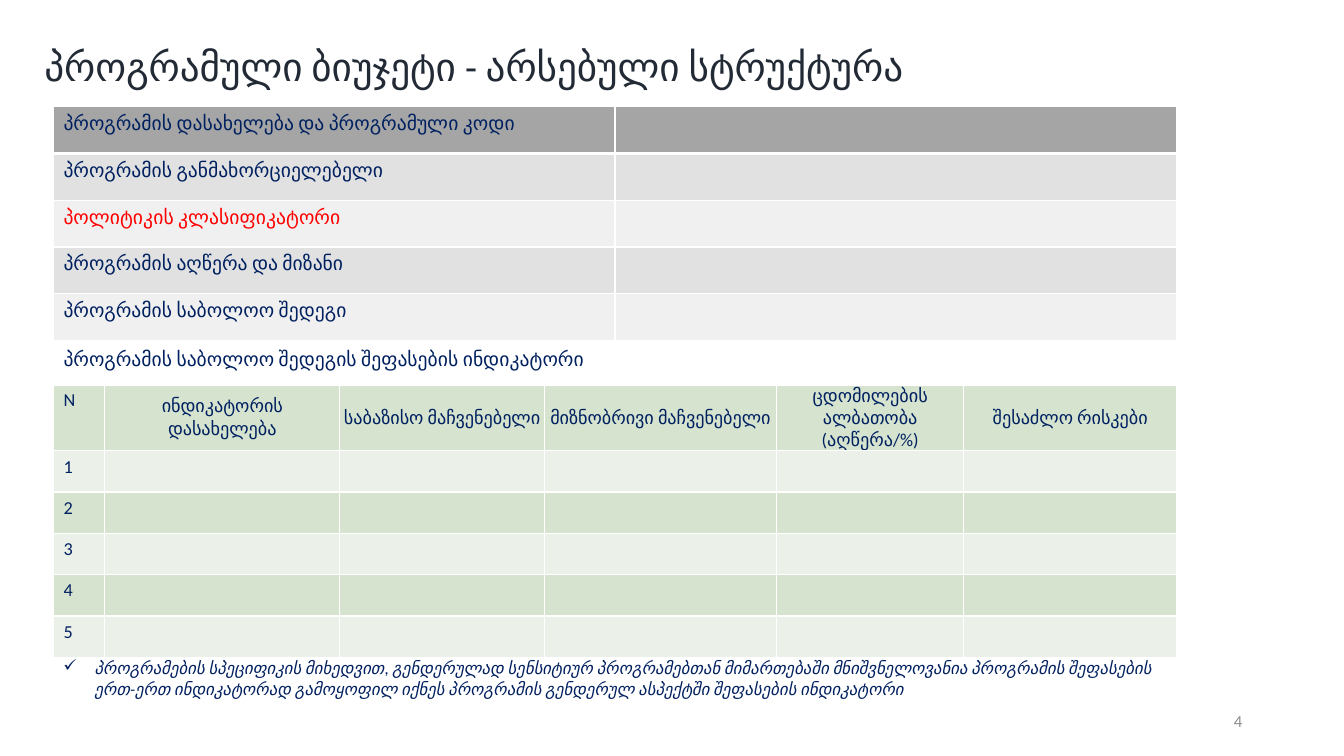
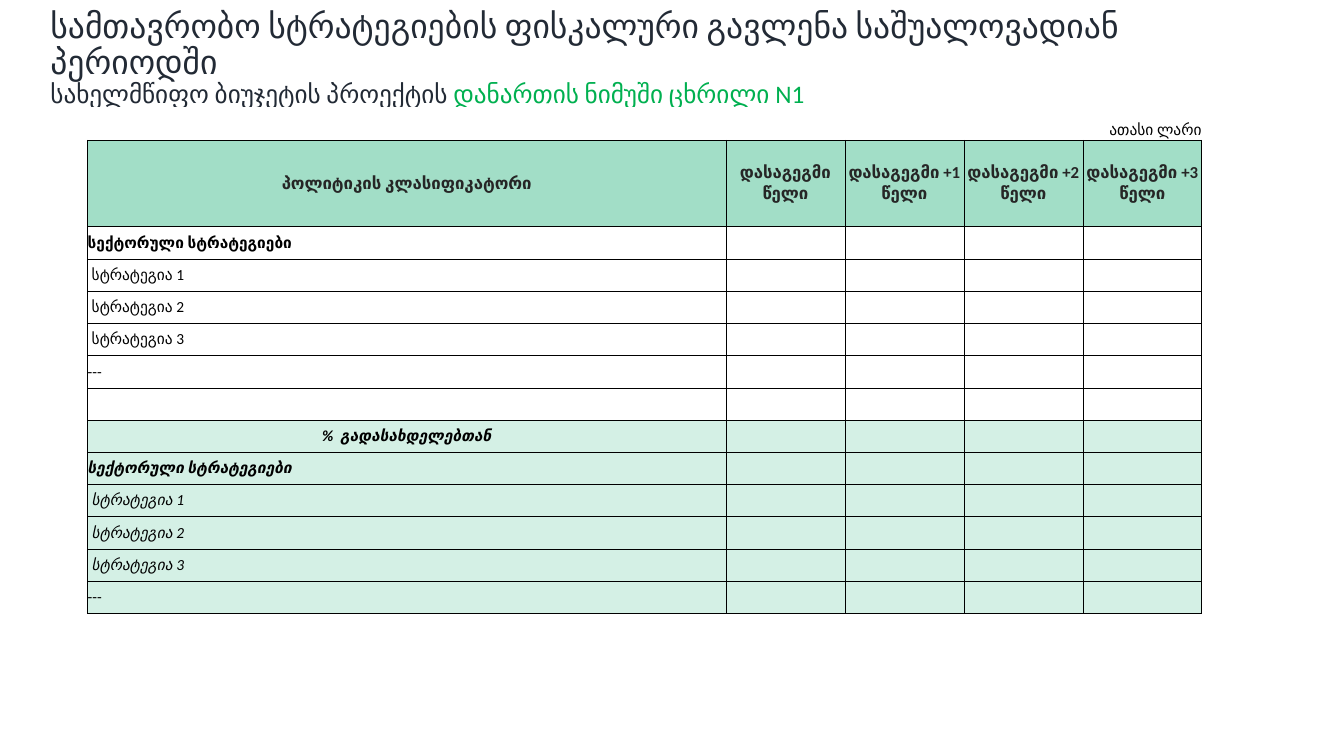
from lxml import etree
from pptx import Presentation
from pptx import util as u
from pptx.dml import color
from pptx.enum import text
from pptx.oxml import ns

COLORS = {
    "title": "222A35", "navy": "002060", "red": "FF0000", "green": "00B050",
    "number": "8C8C8C", "white": "FFFFFF", "black": "000000", "header": "262626",
    "gray": "A5A5A5", "gray_mid": "E1E1E1", "gray_light": "F0F0F0",
    "sage": "D5E3CF", "sage_light": "EBF1E9", "mint": "A2DEC7", "mint_light": "D4F0E5",
}
FONT = "Calibri"
LEFT, CENTER, RIGHT = text.PP_ALIGN.LEFT, text.PP_ALIGN.CENTER, text.PP_ALIGN.RIGHT
TOP, MIDDLE, BOTTOM = text.MSO_ANCHOR.TOP, text.MSO_ANCHOR.MIDDLE, text.MSO_ANCHOR.BOTTOM
SIDES = ("L", "R", "T", "B")


def rgb(name):
    return color.RGBColor.from_string(COLORS[name])


def apply(target, values):
    for name, value in values.items():
        setattr(target, name, value)


def add_run(paragraph, wording, size, color_name, **values):
    run = paragraph.add_run()
    run.text = wording
    apply(run.font, {"name": FONT, "size": u.Pt(size), **values})
    run.font.color.rgb = rgb(color_name)


def set_title(slide, box, anchor, lines, space_before=0):
    title = slide.shapes.title
    apply(title, dict(zip(("left", "top", "width", "height"), map(u.Inches, box))))
    apply(title.text_frame, {"word_wrap": True, "vertical_anchor": anchor,
                             "auto_size": text.MSO_AUTO_SIZE.NONE})
    paragraph = title.text_frame.paragraphs[0]
    apply(paragraph, {"alignment": LEFT, "line_spacing": 0.9,
                      "space_before": u.Pt(space_before)})
    for index, line in enumerate(lines):
        if index:
            paragraph.add_line_break()
        for wording, size, color_name in line:
            add_run(paragraph, wording, size, color_name)


def add_text(slide, box, wording, size, color_name, alignment=LEFT, anchor=TOP, **values):
    shape = slide.shapes.add_textbox(*map(u.Inches, box))
    apply(shape.text_frame, {"word_wrap": True, "vertical_anchor": anchor})
    paragraph = shape.text_frame.paragraphs[0]
    paragraph.alignment = alignment
    add_run(paragraph, wording, size, color_name, **values)
    return paragraph


def add_check_bullet(paragraph, indent):
    properties = paragraph._p.get_or_add_pPr()
    properties.set("marL", str(u.Inches(indent)))
    properties.set("indent", str(-u.Inches(indent)))
    etree.SubElement(properties, ns.qn("a:buChar"), char="✓")


def add_table(slide, left, top, columns, rows):
    frame = slide.shapes.add_table(len(rows), len(columns), *map(
        u.Inches, (left, top, sum(columns), sum(rows))))
    table = frame.table
    apply(table, {"first_row": False, "horz_banding": False})
    for column, width in zip(table.columns, columns):
        column.width = u.Inches(width)
    for row, height in zip(table.rows, rows):
        row.height = u.Inches(height)
    return table


def style_cell(cell, fill, border, widths):
    properties = cell._tc.get_or_add_tcPr()
    for side in SIDES:
        if side in widths:
            line = etree.SubElement(properties, ns.qn("a:ln" + side),
                                    w=str(u.Pt(widths[side])))
            solid = etree.SubElement(line, ns.qn("a:solidFill"))
            etree.SubElement(solid, ns.qn("a:srgbClr"), val=COLORS[border])
    cell.fill.solid()
    cell.fill.fore_color.rgb = rgb(fill)


def style_white_grid(table, fills):
    for row_index, fill in enumerate(fills):
        widths = dict.fromkeys(SIDES, 1)
        if row_index < 2:
            widths["TB"[1 - row_index]] = 3
        for cell in table.rows[row_index].cells:
            style_cell(cell, fill, "white", widths)


def set_margins(cell, left, top, right, bottom):
    names = ("margin_left", "margin_top", "margin_right", "margin_bottom")
    apply(cell, dict(zip(names, map(u.Inches, (left, top, right, bottom)))))


def write_cell(cell, wording, size, color_name, alignment=LEFT, anchor=TOP, **values):
    cell.vertical_anchor = anchor
    paragraph = cell.text_frame.paragraphs[0]
    paragraph.alignment = alignment
    add_run(paragraph, wording, size, color_name, **values)


def add_program_table(slide, left, top, width):
    labels = (
        ("პროგრამის დასახელება და პროგრამული კოდი", "navy"),
        ("პროგრამის განმახორციელებელი", "navy"),
        ("პოლიტიკის კლასიფიკატორი", "red"),
        ("პროგრამის აღწერა და მიზანი", "navy"),
        ("პროგრამის საბოლოო შედეგი", "navy"),
    )
    table = add_table(slide, left, top, [width / 2] * 2, [0.464] * len(labels))
    style_white_grid(table, ["gray"] + ["gray_mid", "gray_light"] * 2)
    for row_index, (label, color_name) in enumerate(labels):
        write_cell(table.cell(row_index, 0), label, 14, color_name)


def add_indicator_table(slide, left, top):
    headings = ("ინდიკატორის დასახელება", "საბაზისო მაჩვენებელი",
                "მიზნობრივი მაჩვენებელი", "ცდომილების ალბათობა (აღწერა/%)",
                "შესაძლო რისკები")
    table = add_table(slide, left, top, [0.51, 2.33, 2.03, 2.3, 1.86, 2.11],
                      [0.41, 0.56] + [0.41] * 5)
    style_white_grid(table, ["white"] + ["sage", "sage_light"] * 3)
    table.cell(0, 0).merge(table.cell(0, 4))
    write_cell(table.cell(0, 0), "პროგრამის საბოლოო შედეგის შეფასების ინდიკატორი", 14, "navy")
    for row_index, label in enumerate("N12345", 1):
        write_cell(table.cell(row_index, 0), label, 13, "navy")
    for column_index, heading in enumerate(headings, 1):
        cell = table.cell(1, column_index)
        set_margins(cell, 0.01, 0.01, 0.01, 0)
        write_cell(cell, heading, 13, "navy", CENTER, MIDDLE)


def add_strategy_table(slide, left, top):
    strategies = [f"სტრატეგია {number}" for number in (1, 2, 3)]
    sector = "სექტორული სტრატეგიები"
    labels = [sector, *strategies, "---", "", "%  გადასახდელებთან",
              sector, *strategies, "---"]
    headings = ["პოლიტიკის კლასიფიკატორი", "დასაგეგმი წელი"]
    headings += [f"დასაგეგმი +{year} წელი" for year in (1, 2, 3)]
    share_index = 6

    table = add_table(slide, left, top, [6.33] + [1.18] * 4,
                      [0.32, 0.86] + [0.32] * len(labels))
    fills = ["white", "mint"] + ["white"] * share_index
    fills += ["mint_light"] * (len(labels) - share_index)
    for row_index, fill in enumerate(fills):
        sides = SIDES if row_index else "B"
        for cell in table.rows[row_index].cells:
            set_margins(cell, 0, 0, 0, 0)
            style_cell(cell, fill, "black", dict.fromkeys(sides, 0.5))

    table.cell(0, 3).merge(table.cell(0, 4))
    write_cell(table.cell(0, 3), "ათასი ლარი", 11, "black", RIGHT, BOTTOM)
    for column_index, heading in enumerate(headings):
        write_cell(table.cell(1, column_index), heading, 12, "header", CENTER, MIDDLE, bold=True)
    for index, label in enumerate(labels):
        if not label:
            continue
        cell = table.cell(index + 2, 0)
        if label in strategies:
            cell.margin_left = u.Inches(0.04)
        write_cell(cell, label, 11, "black",
                   CENTER if index == share_index else LEFT, MIDDLE,
                   bold=label == sector or index == share_index,
                   italic=index >= share_index and label != "---")


def build_structure_slide(slide):
    left, width = 0.53, 11.14
    set_title(slide, (0.34, 0.42, 12.69, 0.58), TOP,
              [[("პროგრამული ბიუჯეტი - არსებული სტრუქტურა", 28, "title")]], 10)
    add_text(slide, (9.42, 6.95, 3, 0.4), "4", 12, "number", RIGHT, MIDDLE)
    add_indicator_table(slide, left, 3.4)
    add_program_table(slide, left, 1.06, width)
    note = add_text(
        slide, (left, 6.48, width, 0.5),
        "პროგრამების სპეციფიკის მიხედვით, გენდერულად სენსიტიურ პროგრამებთან "
        "მიმართებაში მნიშვნელოვანია პროგრამის შეფასების ერთ-ერთ ინდიკატორად "
        "გამოყოფილ იქნეს პროგრამის გენდერულ ასპექტში შეფასების ინდიკატორი",
        12, "navy", italic=True)
    add_check_bullet(note, 0.31)


def build_strategy_slide(slide):
    set_title(slide, (0.4, 0.22, 12.18, 0.73), MIDDLE, [
        [("სამთავრობო სტრატეგიების ფისკალური გავლენა საშუალოვადიან პერიოდში", 24, "title")],
        [("სახელმწიფო ბიუჯეტის პროექტის ", 18, "title"),
         ("დანართის ნიმუში ცხრილი N1", 18, "green")],
    ])
    add_strategy_table(slide, 0.87, 1.07)


def main():
    presentation = Presentation()
    apply(presentation, {"slide_width": u.Inches(13.33), "slide_height": u.Inches(7.5)})
    title_only = presentation.slide_layouts[5]
    for build in (build_structure_slide, build_strategy_slide):
        build(presentation.slides.add_slide(title_only))
    presentation.save("out.pptx")


if __name__ == "__main__":
    main()
